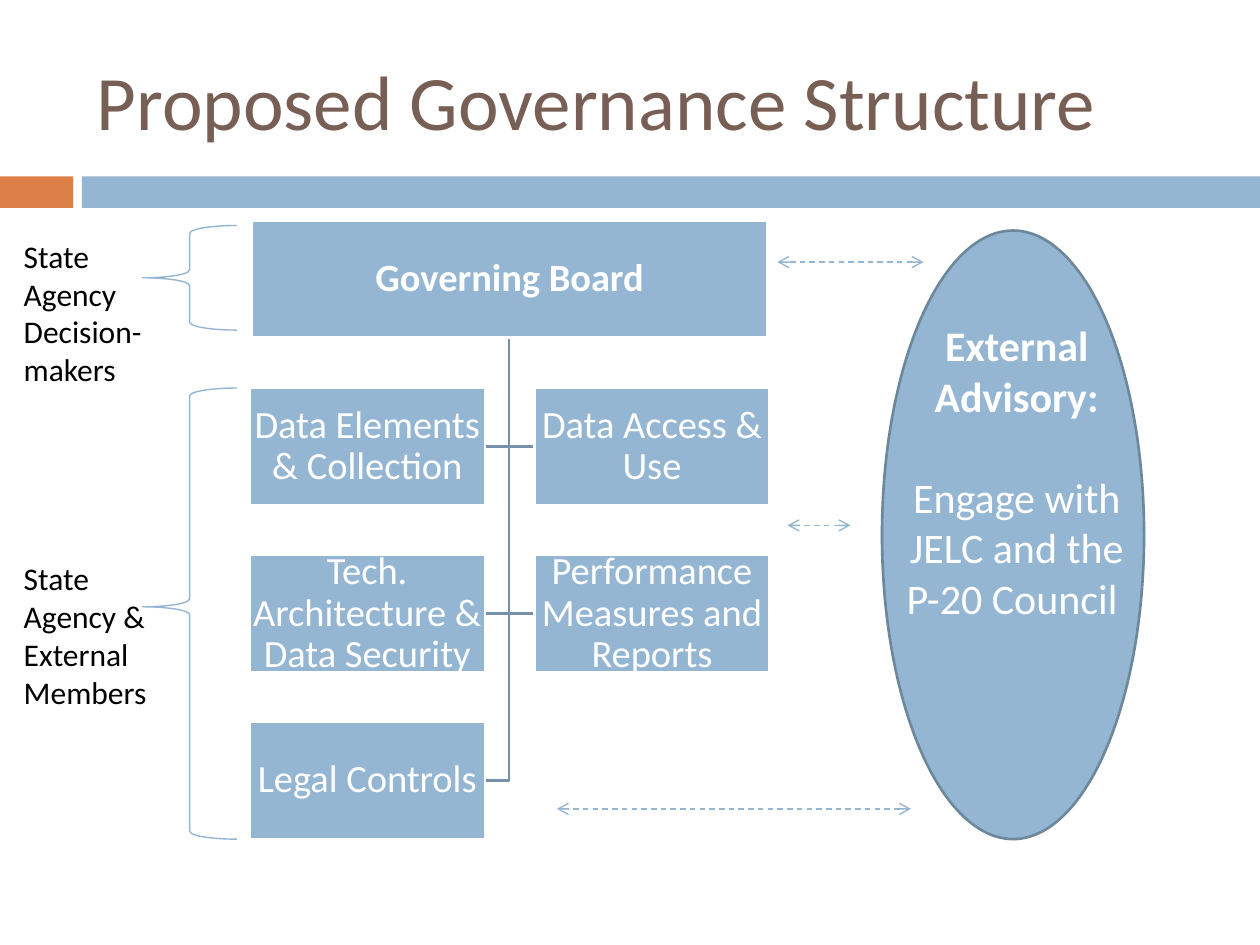
from dataclasses import dataclass

from pptx import Presentation
from pptx.dml.color import RGBColor as RGB
from pptx.enum.dml import MSO_LINE as Dash
from pptx.enum.shapes import MSO_CONNECTOR as Conn, MSO_SHAPE as Kind
from pptx.enum.text import MSO_ANCHOR as Anchor, PP_ALIGN as Align
from pptx.oxml.ns import qn
from pptx.util import Inches, Pt
from lxml.etree import SubElement


@dataclass(frozen=True)
class Theme:
    font: str = "Calibri"
    blue: str = "94B6D2"
    orange: str = "DD8047"
    brown: str = "775F55"
    trunk: str = "7792A8"
    rim: str = "6D879B"
    white: str = "FFFFFF"
    black: str = "000000"
    title: int = 44
    panel: int = 24
    box: int = 22
    label: int = 18
    thick: float = 1.5
    thin: float = 0.79


THEME = Theme()
BOX_W, BOX_H = 1.87, 0.93
COLS = (1.98, 4.24)
TOP, STEP = 3.08, 1.325
MID = 4.04
BOARD = (2, 1.75, 4.09, BOX_H)
TEAMS = [
    ("Data Elements & Collection", 0, 0),
    ("Data Access & Use", 1, 0),
    ("Tech. Architecture & Data Security", 0, 1),
    ("Performance Measures and Reports", 1, 1),
    ("Legal Controls", 0, 2),
]
ARROWS = [(7.33, 6.17, 2.08), (6.75, 6.25, 4.17), (7.23, 4.42, 6.42)]


def write(frame, text, size, color, bold=False, align=Align.LEFT,
          anchor=Anchor.TOP, inset=None, spacing=None, gap=0):
    """Fill a frame, one paragraph per line; bold covers the first one only."""
    frame.word_wrap = True
    frame.vertical_anchor = anchor
    if inset is not None:
        frame.margin_left = frame.margin_right = Inches(inset)
        frame.margin_top = frame.margin_bottom = Inches(inset)
    for i, line in enumerate(text.split("\n")):
        para = frame.add_paragraph() if i else frame.paragraphs[0]
        para.alignment = align
        if spacing:
            para.line_spacing = spacing
        if i:
            para.space_before = Pt(gap)
        run = para.add_run()
        run.text = line
        font = run.font
        font.name, font.size, font.bold = THEME.font, Pt(size), bold and i == 0
        font.color.rgb = RGB.from_string(color)


def stroke(line, color, width):
    line.color.rgb = RGB.from_string(color)
    line.width = Pt(width)


def shape(slide, kind, at, fill=None, line=None, width=THEME.thick):
    item = slide.shapes.add_shape(kind, *map(Inches, at))
    item.shadow.inherit = False
    if fill:
        item.fill.solid()
        item.fill.fore_color.rgb = RGB.from_string(fill)
    else:
        item.fill.background()
    if line:
        stroke(item.line, line, width)
    else:
        item.line.fill.background()
    return item


def label(slide, text, at, size, color, **style):
    area = slide.shapes.add_textbox(*map(Inches, at))
    write(area.text_frame, text, size, color, **style)


def box(slide, text, at, bold=False):
    item = shape(slide, Kind.RECTANGLE, at, THEME.blue, THEME.white)
    write(item.text_frame, text, THEME.box, THEME.white, bold=bold,
          align=Align.CENTER, anchor=Anchor.MIDDLE, inset=0.02, spacing=0.9)


def elbow(slide, col, top):
    """Run from below the board down the trunk to a team's inner side."""
    start = BOARD[1] + BOX_H
    side = COLS[0] + BOX_W if col == 0 else COLS[1]
    turn = top + BOX_H / 2
    pen = slide.shapes.build_freeform(Inches(MID), Inches(start))
    pen.add_line_segments([(Inches(MID), Inches(turn)),
                           (Inches(side), Inches(turn))], close=False)
    item = pen.convert_to_shape()
    item.shadow.inherit = False
    item.fill.background()
    stroke(item.line, THEME.trunk, THEME.thick)


def arrow(slide, right, left, y):
    """Dashed line with an open head at both ends."""
    link = slide.shapes.add_connector(
        Conn.STRAIGHT, Inches(right), Inches(y), Inches(left), Inches(y))
    stroke(link.line, THEME.blue, THEME.thin)
    link.line.dash_style = Dash.DASH
    for end in ("a:headEnd", "a:tailEnd"):
        SubElement(link.line._get_or_add_ln(), qn(end), type="arrow")
    SubElement(link._element.spPr, qn("a:effectLst"))


def brace(slide, at, middle=0.5):
    item = shape(slide, Kind.LEFT_BRACE, at, line=THEME.blue, width=THEME.thin)
    item.adjustments[1] = middle


def header(slide):
    shape(slide, Kind.RECTANGLE, (0, 1.4, 0.58, 0.25), THEME.orange)
    shape(slide, Kind.RECTANGLE, (0.65, 1.4, 9.35, 0.25), THEME.blue)
    label(slide, "Proposed Governance Structure", (0.67, 0.25, 9.16, 1.08),
          THEME.title, THEME.brown, anchor=Anchor.MIDDLE)


def chart(slide):
    for _, col, row in TEAMS:
        elbow(slide, col, TOP + row * STEP)
    box(slide, "Governing Board", BOARD, bold=True)
    for name, col, row in TEAMS:
        box(slide, name, (COLS[col], TOP + row * STEP, BOX_W, BOX_H))


def panel(slide):
    shape(slide, Kind.OVAL, (7, 1.83, 2.08, 4.83), THEME.blue, THEME.rim)
    label(slide, "External Advisory:\nEngage with JELC and the P-20 Council ",
          (7.05, 2.49, 2.04, 2.52), THEME.panel, THEME.white, bold=True,
          align=Align.CENTER, gap=29)


def main():
    deck = Presentation()
    deck.slide_width, deck.slide_height = Inches(10), Inches(7.5)
    slide = deck.slides.add_slide(deck.slide_layouts[6])
    header(slide)
    chart(slide)
    panel(slide)
    for right, left, y in ARROWS:
        arrow(slide, right, left, y)
    brace(slide, (1.13, 1.79, 0.75, 0.83))
    brace(slide, (1.13, TOP, 0.75, 3.58), middle=0.485)
    for text, top in (("State Agency Decision-makers", 1.83),
                      ("State Agency & External Members", 4.39)):
        label(slide, text, (0.09, top, 1.44, 1.31), THEME.label, THEME.black)
    deck.save("out.pptx")


if __name__ == "__main__":
    main()
